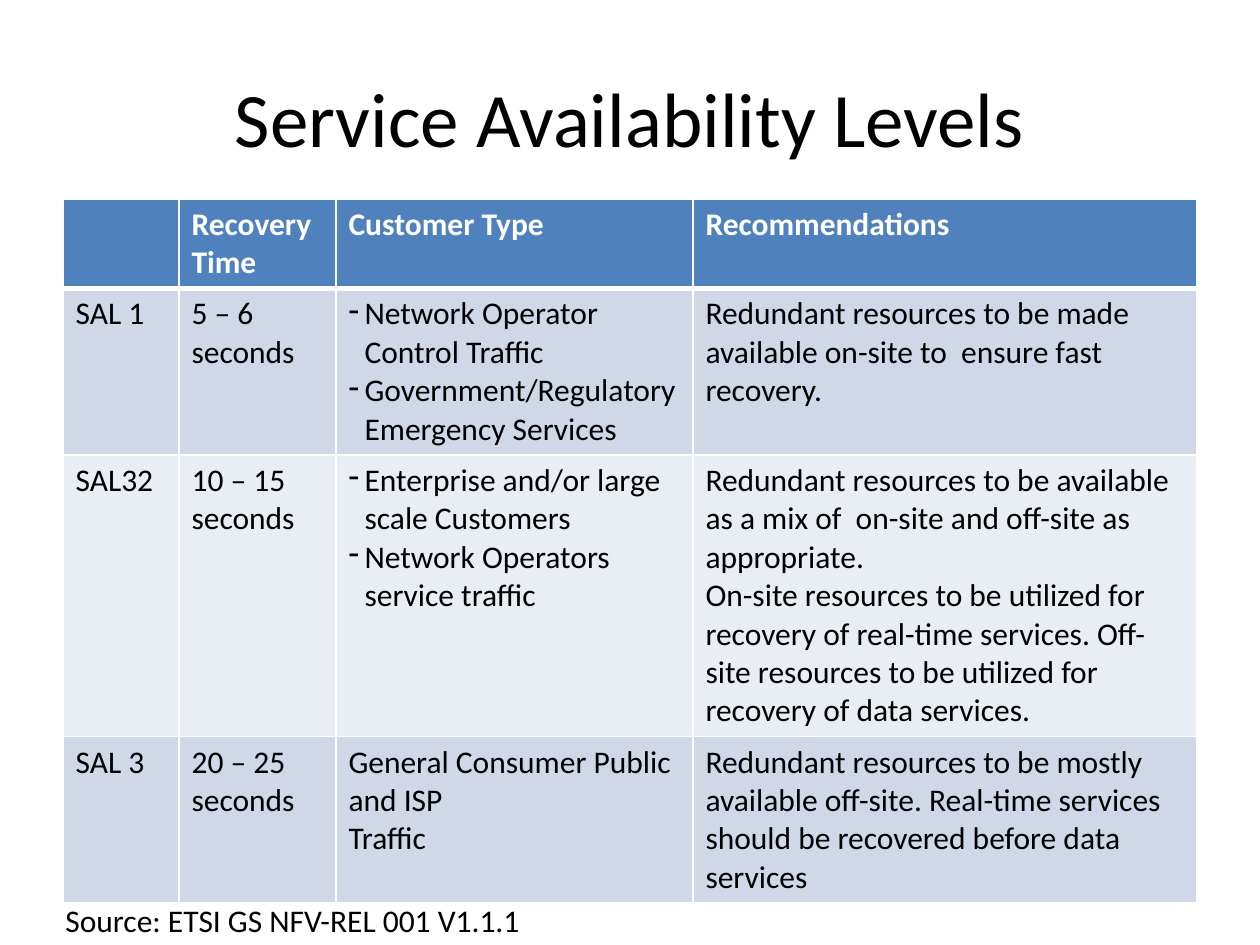
from lxml import etree
from pptx import Presentation
from pptx import util as u
from pptx.dml.color import RGBColor
from pptx.enum import text
from pptx.oxml import ns

PX = 914400 / 126
INK, WHITE = "000000", "FFFFFF"
FILLS = ["4F81BD", "D0D8E8", "E9EDF4", "D0D8E8"]
COLS = [116, 157, 357, 504]
ROWS = [88, 165, 281, 165]
DASH = 16  # hanging indent of dashed lines


def px(*nums):
    return [u.Emu(round(n * PX)) for n in nums]


def write(frame, words, size=18, color=INK, bold=False, align=None):
    """Fill a text frame, one paragraph a line; a leading "- " makes a bullet."""
    for i, line in enumerate(words.split("\n")):
        par = frame.add_paragraph() if i else frame.paragraphs[0]
        if align is not None:
            par.alignment = align
        if line.startswith("- "):
            line = line[2:]
            props = par._p.get_or_add_pPr()
            step = px(DASH)[0]
            props.set("marL", str(step))
            props.set("indent", str(-step))
            etree.SubElement(props, ns.qn("a:buChar")).set("char", "-")
        run = par.add_run()
        run.text = line
        font = run.font
        font.name, font.size, font.bold = "Calibri", u.Pt(size), bold
        font.color.rgb = RGBColor.from_string(color)


deck = Presentation()
deck.slide_width, deck.slide_height = px(1260, 945)
slide = deck.slides.add_slide(deck.slide_layouts[5])

title = slide.shapes.title
title.left, title.top, title.width, title.height = px(63, 38, 1134, 157)
title.text_frame.vertical_anchor = text.MSO_ANCHOR.MIDDLE
write(title.text_frame, "Service Availability Levels", size=44,
      align=text.PP_ALIGN.CENTER)

LEVELS = [
    ["", "Recovery Time", "Customer Type", "Recommendations"],
    ["SAL 1", "5 – 6 seconds",
     "- Network Operator Control Traffic\n"
     "- Government/Regulatory Emergency Services",
     "Redundant resources to be made available on-site to  ensure fast "
     "recovery."],
    ["SAL32", "10 – 15 seconds",
     "- Enterprise and/or large scale Customers\n"
     "- Network Operators service traffic",
     "Redundant resources to be available as a mix of  on-site and off-site "
     "as appropriate.\n"
     "On-site resources to be utilized for  recovery of real-time services. "
     "Off-site resources to be utilized for  recovery of data services."],
    ["SAL 3", "20 – 25 seconds",
     "General Consumer Public and ISP\nTraffic",
     "Redundant resources to be mostly available off-site. Real-time "
     "services should be recovered before data  services"],
]

table = slide.shapes.add_table(
    len(ROWS), len(COLS), *px(63, 199, sum(COLS), sum(ROWS))).table
for col, wide in zip(table.columns, px(*COLS)):
    col.width = wide
for row, tall in zip(table.rows, px(*ROWS)):
    row.height = tall

for r, level in enumerate(LEVELS):
    head = r == 0
    for c, words in enumerate(level):
        cell = table.cell(r, c)
        cell.fill.solid()
        cell.fill.fore_color.rgb = RGBColor.from_string(FILLS[r])
        if words:
            write(cell.text_frame, words, color=WHITE if head else INK,
                  bold=head)
        props = cell._tc.get_or_add_tcPr()
        for i, side in enumerate("LRTB"):
            thick = (r, side) in [(0, "B"), (1, "T")]
            line = etree.Element(ns.qn("a:ln" + side))
            line.set("w", str(u.Pt(3 if thick else 1)))
            fill = etree.SubElement(line, ns.qn("a:solidFill"))
            etree.SubElement(fill, ns.qn("a:srgbClr")).set("val", WHITE)
            props.insert(i, line)

source = slide.shapes.add_textbox(*px(53, 895, 499, 50)).text_frame
source.word_wrap = False
source.auto_size = text.MSO_AUTO_SIZE.SHAPE_TO_FIT_TEXT
write(source, "Source: ETSI GS NFV-REL 001 V1.1.1")

deck.save("out.pptx")
